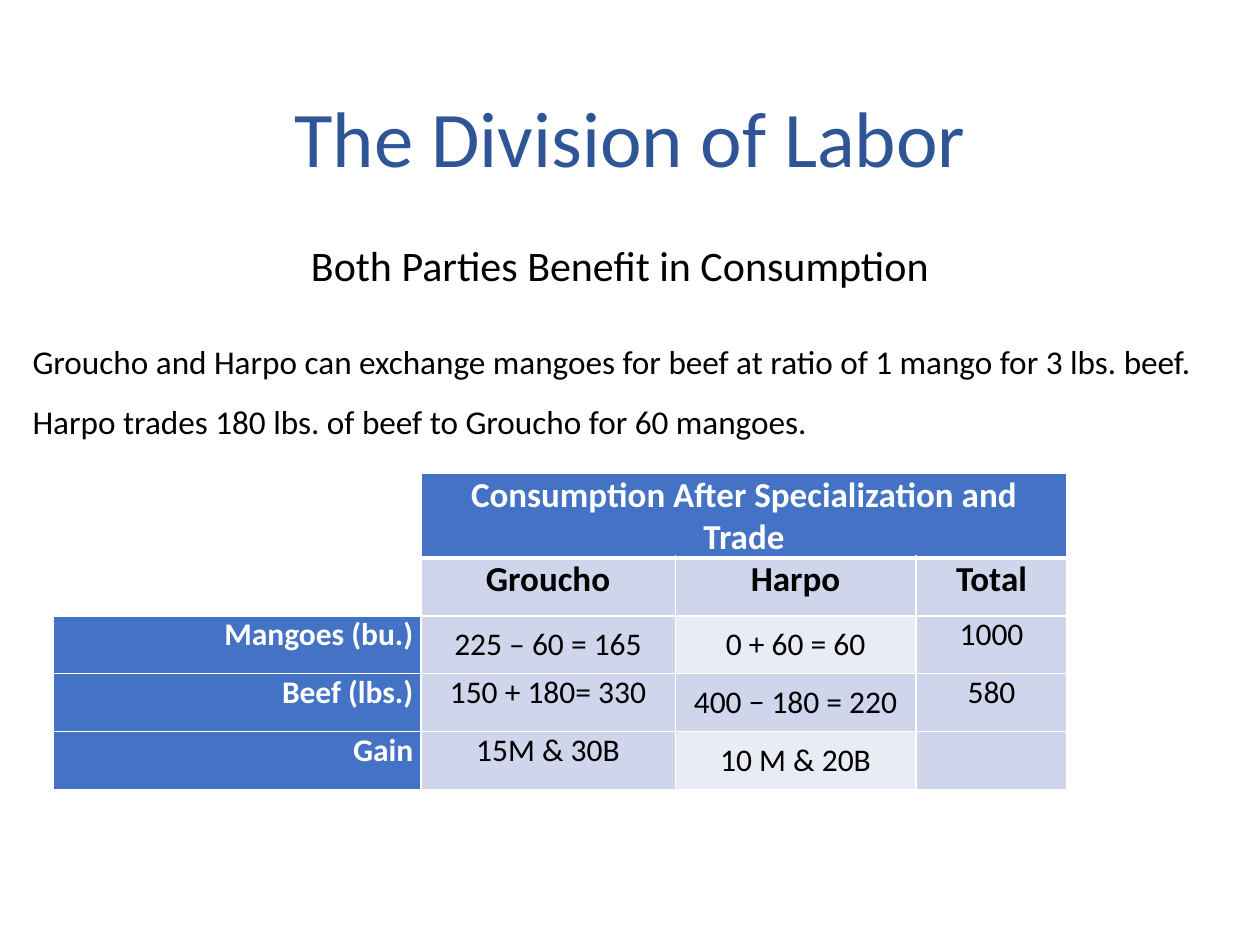
"""Build the slide on the division of labor with its consumption table."""
from lxml import etree
from pptx import Presentation
from pptx.dml.color import RGBColor
from pptx.enum.text import MSO_ANCHOR, PP_ALIGN
from pptx.oxml.ns import qn
from pptx.util import Inches, Pt

LEFT, CENTER, RIGHT = PP_ALIGN.LEFT, PP_ALIGN.CENTER, PP_ALIGN.RIGHT
TOP, MIDDLE = MSO_ANCHOR.TOP, MSO_ANCHOR.MIDDLE
COLORS = {"title": "2F5597", "text": "000000", "white": "FFFFFF",
          "header": "4472C4", "band": "CFD5EA", "light": "E9EBF5"}


def write(frame, *lines, size=18, color="text", bold=False, align=LEFT, anchor=TOP, spacing=1.0):
    frame.word_wrap = True
    frame.vertical_anchor = anchor
    for index, line in enumerate(lines):
        para = frame.add_paragraph() if index else frame.paragraphs[0]
        para.alignment = align
        para.line_spacing = spacing
        span = para.add_run()
        span.text = line
        span.font.name = "Calibri"
        span.font.size = Pt(size)
        span.font.bold = bold
        span.font.color.rgb = RGBColor.from_string(COLORS[color])


def draw_borders(cell, bottom):
    properties = cell._tc.get_or_add_tcPr()
    for index, side in enumerate(("lnL", "lnR", "lnT", "lnB")):
        width = bottom if side == "lnB" else 1
        line = etree.Element(qn(f"a:{side}"), w=str(Pt(width)))
        fill = etree.SubElement(line, qn("a:solidFill"))
        etree.SubElement(fill, qn("a:srgbClr"), val=COLORS["white"])
        properties.insert(index, line)


deck = Presentation()
deck.slide_width, deck.slide_height = Inches(10), Inches(7.5)
page = deck.slides.add_slide(deck.slide_layouts[5])

title = page.shapes.title
title.left, title.top, title.width, title.height = map(Inches, (0.69, 0.4, 8.62, 1.45))
write(title.text_frame, "The Division of Labor", size=45, color="title",
      align=CENTER, anchor=MIDDLE, spacing=0.9)

subtitle = page.shapes.add_textbox(*map(Inches, (2.37, 1.85, 5.14, 0.5)))
write(subtitle.text_frame, "Both Parties Benefit in Consumption", size=24)

terms = page.shapes.add_textbox(*map(Inches, (0.16, 2.5, 9.68, 1.01)))
write(terms.text_frame,
      "Groucho and Harpo can exchange mangoes for beef at ratio of 1 mango for 3 lbs. beef.",
      "Harpo trades 180 lbs. of beef to Groucho for 60 mangoes.", size=19, spacing=1.5)

rows = [
    ["", "Consumption After Specialization and Trade", "", ""],
    ["", "Groucho", "Harpo", "Total"],
    ["Mangoes (bu.)", "225 – 60 = 165", "0 + 60 = 60", "1000"],
    ["Beef (lbs.)", "150 + 180= 330", "400 − 180 = 220", "580"],
    ["Gain", "15M & 30B", "10 M & 20B", ""],
]
column_widths = [2.92, 2.02, 1.91, 1.2]
row_heights = [0.58] + [0.46] * 4
middle_cells = {(0, 1), (2, 1), (2, 2), (3, 2), (4, 2)}
light_cells = {(2, 2), (4, 2)}

table = page.shapes.add_table(len(rows), len(column_widths), *map(
    Inches, (0.42, 3.76, sum(column_widths), sum(row_heights)))).table
for column, width in zip(table.columns, column_widths):
    column.width = Inches(width)
for row, height in zip(table.rows, row_heights):
    row.height = Inches(height)
table.cell(0, 1).merge(table.cell(0, 3))

for row, texts in enumerate(rows):
    for column, text in enumerate(texts):
        cell = table.cell(row, column)
        is_label = column == 0
        is_header = row == 0 or is_label
        if is_label and row < 2:
            shade = "white"
        elif is_header:
            shade = "header"
        else:
            shade = "light" if (row, column) in light_cells else "band"
        cell.fill.solid()
        cell.fill.fore_color.rgb = RGBColor.from_string(COLORS[shade])
        cell.margin_left = cell.margin_right = Inches(0.06)
        cell.margin_top = cell.margin_bottom = 0
        cell.vertical_anchor = MIDDLE if (row, column) in middle_cells else TOP
        draw_borders(cell, bottom=3 if row == 0 else 1)
        if text:
            write(cell.text_frame, text, size=20 if row < 2 else 18,
                  color="white" if is_header else "text", bold=row < 2 or is_label,
                  align=RIGHT if is_label else CENTER, anchor=None)

deck.save("out.pptx")
